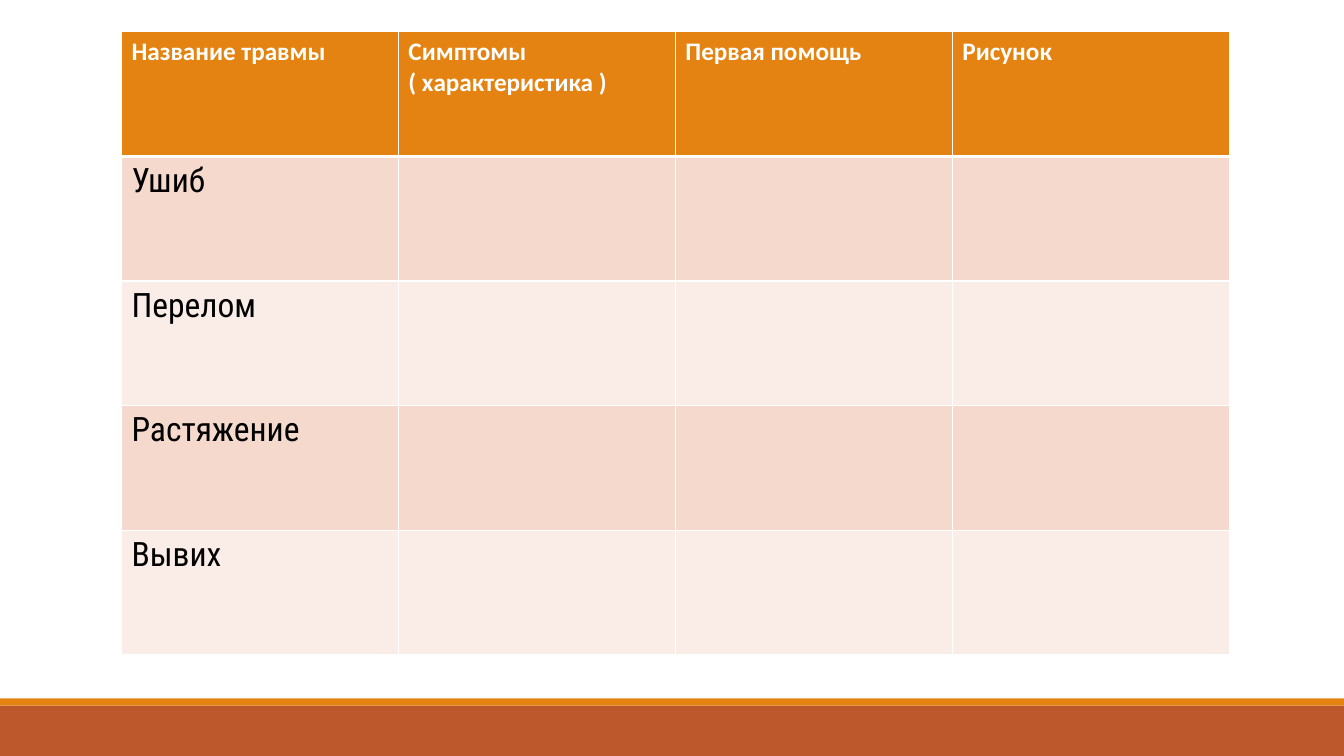
from lxml.etree import SubElement
from pptx import Presentation
from pptx.dml.color import RGBColor
from pptx.enum.shapes import MSO_SHAPE
from pptx.oxml.ns import qn
from pptx.util import Cm, Pt

COLORS = {
    "header": "E48312",
    "odd row": "F5D9CC",
    "even row": "FAEDE7",
    "footer": "BD582C",
    "border": "FFFFFF",
    "header text": "FFFFFF",
    "body text": "000000",
}
HEADERS = ["Название травмы", "Симптомы\n( характеристика )", "Первая помощь", "Рисунок"]
INJURIES = ["Ушиб", "Перелом", "Растяжение", "Вывих"]
ROWS = [HEADERS] + [[injury, "", "", ""] for injury in INJURIES]

SLIDE_WIDTH, SLIDE_HEIGHT = 33.87, 19.05
FOOTER_BARS = [("footer", 17.78, 1.27), ("header", 17.6, 0.18)]  # color, top, height
TABLE_LEFT, TABLE_TOP = 3.06, 0.8
COLUMN_WIDTH, ROW_HEIGHT = 6.98, 3.14
THIN, THICK = 1, 3


def rgb(name):
    return RGBColor.from_string(COLORS[name])


def add_borders(cell, top, bottom):
    properties = cell._tc.get_or_add_tcPr()
    for side, width in (("L", THIN), ("R", THIN), ("T", top), ("B", bottom)):
        line = SubElement(properties, qn(f"a:ln{side}"), w=str(Pt(width)))
        fill = SubElement(line, qn("a:solidFill"))
        SubElement(fill, qn("a:srgbClr"), val=COLORS["border"])


deck = Presentation()
deck.slide_width, deck.slide_height = Cm(SLIDE_WIDTH), Cm(SLIDE_HEIGHT)
page = deck.slides.add_slide(deck.slide_layouts[6])

# Footer bars
for color, top, height in FOOTER_BARS:
    bar = page.shapes.add_shape(MSO_SHAPE.RECTANGLE, 0, Cm(top), Cm(SLIDE_WIDTH), Cm(height))
    bar.shadow.inherit = False
    bar.fill.solid()
    bar.fill.fore_color.rgb = rgb(color)
    bar.line.fill.background()

# Injury table
table = page.shapes.add_table(
    len(ROWS), len(HEADERS), Cm(TABLE_LEFT), Cm(TABLE_TOP),
    Cm(COLUMN_WIDTH * len(HEADERS)), Cm(ROW_HEIGHT * len(ROWS)),
).table
for column in table.columns:
    column.width = Cm(COLUMN_WIDTH)

for row_index, texts in enumerate(ROWS):
    table.rows[row_index].height = Cm(ROW_HEIGHT)
    is_header = row_index == 0
    fill_name = "header" if is_header else "odd row" if row_index % 2 else "even row"
    for column_index, text in enumerate(texts):
        cell = table.cell(row_index, column_index)
        add_borders(cell, THICK if row_index == 1 else THIN, THICK if is_header else THIN)
        cell.fill.solid()
        cell.fill.fore_color.rgb = rgb(fill_name)
        cell.text = text
        for para in cell.text_frame.paragraphs:
            para.font.name = "Calibri" if is_header else "Roboto Condensed"
            para.font.size = Pt(18 if is_header else 24)
            para.font.bold = is_header
            para.font.color.rgb = rgb("header text" if is_header else "body text")

deck.save("out.pptx")
